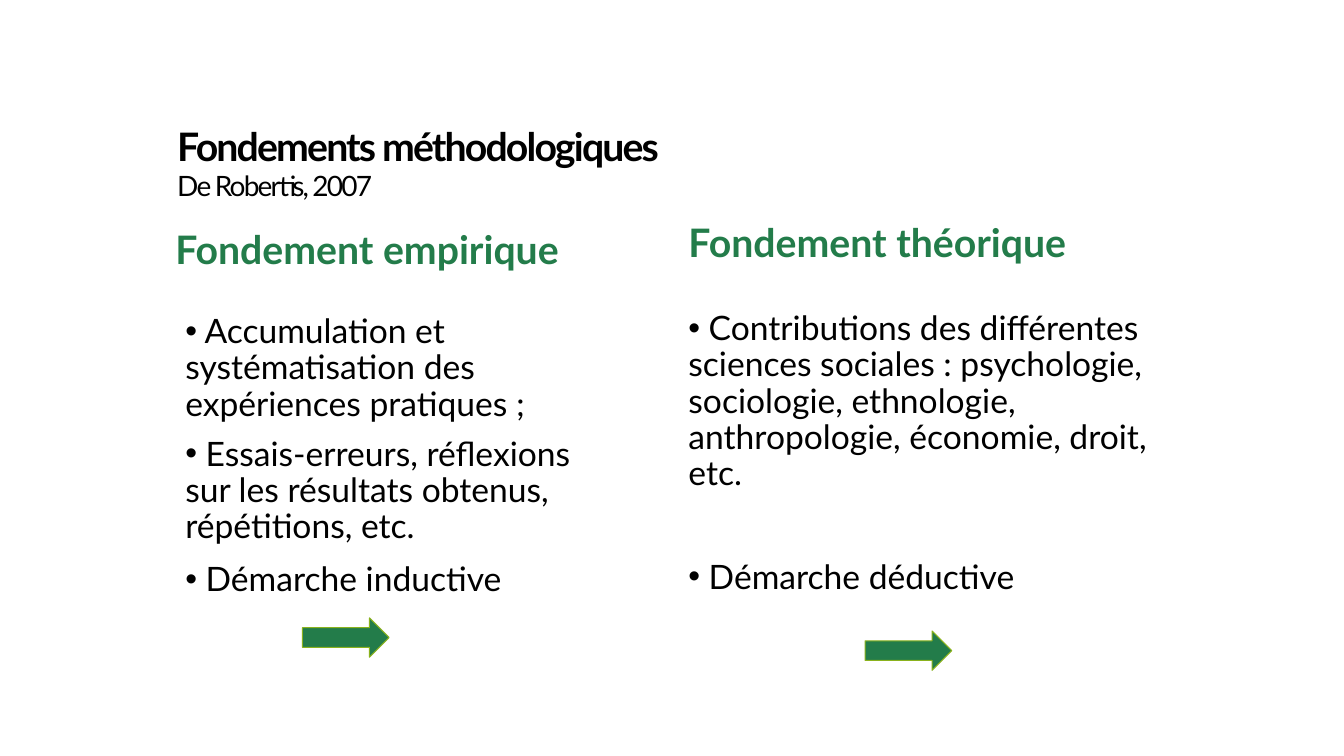
import pptx
import pptx.util
import pptx.dml.color
import pptx.enum.shapes
import pptx.enum.text
import pptx.oxml.ns
from lxml import etree

Inches = pptx.util.Inches
Pt = pptx.util.Pt
RGBColor = pptx.dml.color.RGBColor

BLACK = RGBColor(0x00, 0x00, 0x00)
GREEN = RGBColor(0x23, 0x7C, 0x4A)
LIME = RGBColor(0x8A, 0xB2, 0x1D)
FONT = "Lato"


def add_box(slide, left, top, width, height):
    box = slide.shapes.add_textbox(Inches(left), Inches(top), Inches(width), Inches(height))
    tf = box.text_frame
    tf.word_wrap = True
    tf.vertical_anchor = pptx.enum.text.MSO_ANCHOR.TOP
    return tf


def format_run(r, size, color, bold=False):
    r.font.name = FONT
    r.font.size = Pt(size)
    r.font.bold = bold
    r.font.color.rgb = color


def add_title(slide, title, source):
    tf = add_box(slide, 1.66, 1.16, 8.63, 1.0)
    p = tf.paragraphs[0]
    p.text = f"{title}\v{source}"
    for r, size, bold in zip(p.runs, (28, 20), (True, False)):
        format_run(r, size, BLACK, bold)
        r.font._element.set("spc", "-130")


def add_heading(slide, left, top, text):
    p = add_box(slide, left, top, 4.42, 0.9).paragraphs[0]
    p.text = text
    p.line_spacing = 0.9
    format_run(p.runs[0], 28, GREEN, True)


def add_bullet(p):
    pPr = p._p.get_or_add_pPr()
    pPr.set("marL", "0")
    pPr.set("indent", "0")
    etree.SubElement(pPr, pptx.oxml.ns.qn("a:buFont")).set("typeface", "Arial")
    etree.SubElement(pPr, pptx.oxml.ns.qn("a:buChar")).set("char", "•")


def add_bullets(slide, left, top, width, items):
    """Each item is a text with its space before, in points."""
    tf = add_box(slide, left, top, width, 2.99)
    for i, (text, space) in enumerate(items):
        p = tf.add_paragraph() if i else tf.paragraphs[0]
        p.text = f" {text}"
        add_bullet(p)
        p.line_spacing = 0.9
        p.space_before = Pt(space)
        format_run(p.runs[0], 24, BLACK)


def add_arrow(slide, left, top):
    sp = slide.shapes.add_shape(pptx.enum.shapes.MSO_SHAPE.RIGHT_ARROW,
                                Inches(left), Inches(top), Inches(0.86), Inches(0.39))
    sp.shadow.inherit = False
    sp.fill.solid()
    sp.fill.fore_color.rgb = GREEN
    sp.line.color.rgb = LIME
    sp.line.width = Pt(0.75)


def main():
    prs = pptx.Presentation()
    prs.slide_width = Inches(13.33)
    prs.slide_height = Inches(7.5)
    slide = prs.slides.add_slide(prs.slide_layouts[6])

    add_title(slide, "Fondements méthodologiques", "De Robertis, 2007")

    # Left column: empirical foundation
    add_heading(slide, 1.64, 2.24, "Fondement empirique")
    add_bullets(slide, 1.74, 3.07, 4.23, [
        ("Accumulation et systématisation des expériences pratiques ;", 0),
        ("Essais-erreurs, réflexions sur les résultats obtenus, répétitions, etc.", 10),
        ("Démarche inductive", 12),
    ])
    add_arrow(slide, 3.0, 6.13)

    # Right column: theoretical foundation
    add_heading(slide, 6.73, 2.17, "Fondement théorique")
    add_bullets(slide, 6.73, 3.04, 5.13, [
        ("Contributions des différentes sciences sociales : psychologie, sociologie, "
         "ethnologie, anthropologie, économie, droit, etc.", 0),
        ("Démarche déductive", 48),
    ])
    add_arrow(slide, 8.58, 6.26)

    prs.save("out.pptx")


if __name__ == "__main__":
    main()
